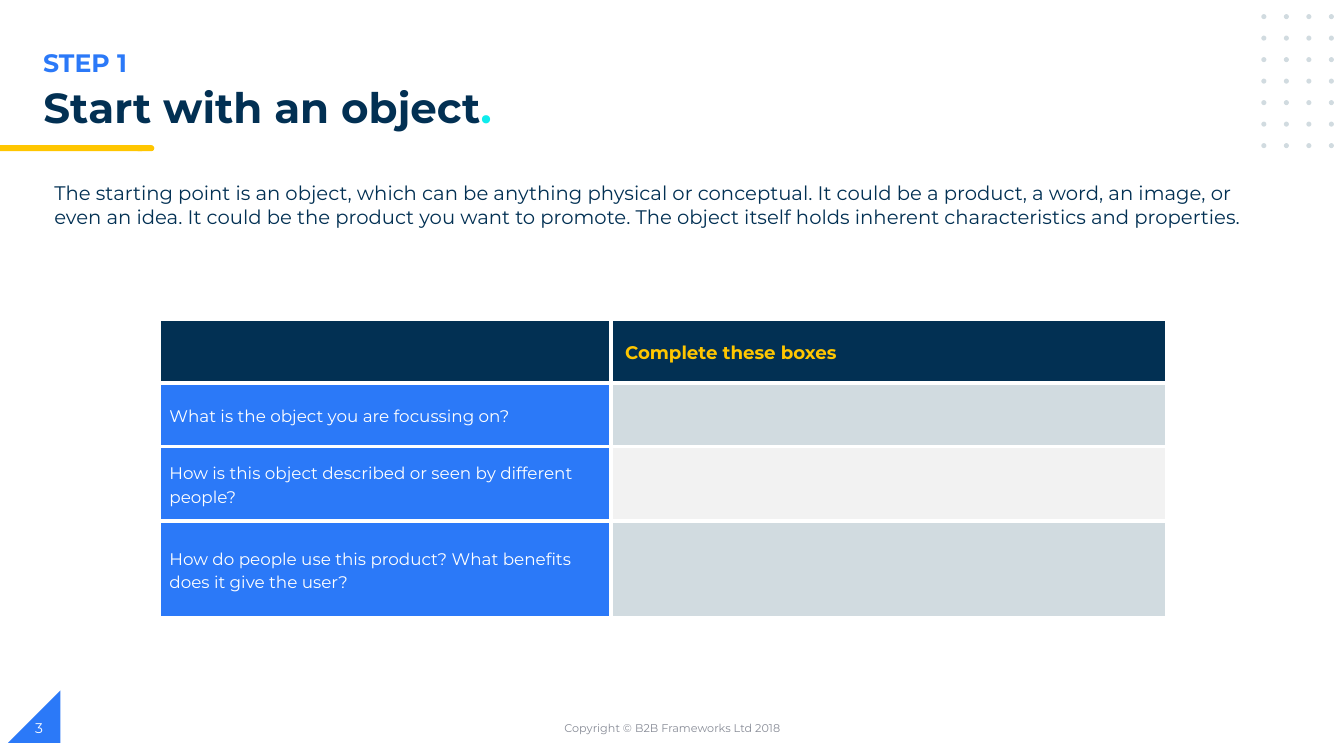
from itertools import product

from lxml.etree import SubElement as SubElem
from pptx import Presentation
from pptx.dml.color import RGBColor
from pptx.enum.shapes import MSO_SHAPE as SHAPE
from pptx.enum.text import MSO_ANCHOR as ANCHOR, MSO_AUTO_SIZE as FIT, PP_ALIGN as ALIGN
from pptx.oxml.ns import qn
from pptx.util import Inches, Pt

NAVY = RGBColor(0x02, 0x30, 0x53)
BLUE = RGBColor(0x2B, 0x79, 0xF8)
GOLD = RGBColor(0xFF, 0xC6, 0x00)
CYAN = RGBColor(0x0E, 0xEC, 0xEC)
MIST = RGBColor(0xD1, 0xDB, 0xE0)
PALE = RGBColor(0xF2, 0xF2, 0xF2)
GRAY = RGBColor(0x88, 0x8C, 0x97)
WHITE = RGBColor(0xFF, 0xFF, 0xFF)


class Deck:
    def __init__(self, font):
        self.font = font
        self.prs = Presentation()
        self.prs.slide_width, self.prs.slide_height = Inches(13.33), Inches(7.5)
        self.slide = self.prs.slides.add_slide(self.prs.slide_layouts[5])

    def style(self, run, size, color, bold=False):
        font = run.font
        font.name, font.size, font.bold = self.font, Pt(size), bold
        font.color.rgb = color

    def shape(self, kind, x, y, w, h, color):
        shape = self.slide.shapes.add_shape(kind, Inches(x), Inches(y), Inches(w), Inches(h))
        shape.shadow.inherit = False
        shape.fill.solid()
        shape.fill.fore_color.rgb = color
        shape.line.fill.background()
        return shape

    def text(self, text, x, y, w, h, size, color, bold=False,
             align=ALIGN.LEFT, anchor=ANCHOR.TOP):
        box = self.slide.shapes.add_textbox(Inches(x), Inches(y), Inches(w), Inches(h))
        frame = box.text_frame
        frame.word_wrap = True
        frame.vertical_anchor = anchor
        frame.text = text
        para = frame.paragraphs[0]
        para.alignment = align
        self.style(para.runs[0], size, color, bold)

    def title(self, text, mark, x, y, w, h):
        """Fill the title placeholder and close it with a coloured mark."""
        title = self.slide.shapes.title
        title.left, title.top = Inches(x), Inches(y)
        title.width, title.height = Inches(w), Inches(h)
        frame = title.text_frame
        frame.text = text
        frame.auto_size = FIT.NONE
        frame.vertical_anchor = ANCHOR.TOP
        para = frame.paragraphs[0]
        para.alignment, para.line_spacing = ALIGN.LEFT, 0.9
        para.add_run().text = mark
        for run, color in zip(para.runs, (NAVY, CYAN)):
            self.style(run, 30, color, True)

    def cell(self, cell, text, fill, size, color, bold, inset):
        props = cell._tc.get_or_add_tcPr()
        for side in "LRTB":
            line = SubElem(props, qn(f"a:ln{side}"), w=str(Pt(3)))
            paint = SubElem(line, qn("a:solidFill"))
            SubElem(paint, qn("a:srgbClr"), val=str(WHITE))
        cell.fill.solid()
        cell.fill.fore_color.rgb = fill
        cell.vertical_anchor = ANCHOR.MIDDLE
        cell.margin_left, cell.margin_right = Inches(inset), Inches(0.1)
        cell.margin_top = cell.margin_bottom = 0
        if text:
            cell.text = text
            para = cell.text_frame.paragraphs[0]
            para.line_spacing = 1.15
            self.style(para.runs[0], size, color, bold)

    def table(self, rows, x, y, widths, heights):
        """Draw rows of (left text, right text, left fill, right fill), the first as header."""
        frame = self.slide.shapes.add_table(
            len(rows), len(widths), Inches(x), Inches(y),
            Inches(sum(widths)), Inches(sum(heights)))
        table = frame.table
        for col, width in zip(table.columns, widths):
            col.width = Inches(width)
        for row, height in zip(table.rows, heights):
            row.height = Inches(height)
        for i, (left, right, *fills) in enumerate(rows):
            look = (12, WHITE, False, 0.1) if i else (13, GOLD, True, 0.14)
            for j, (text, fill) in enumerate(zip((left, right), fills)):
                self.cell(table.cell(i, j), text, fill, *look)


def main():
    deck = Deck("Montserrat")
    corner = deck.shape(SHAPE.RIGHT_TRIANGLE, 0.08, 6.85, 0.52, 0.52, BLUE)
    corner.rotation = 270
    deck.shape(SHAPE.FLOWCHART_TERMINATOR, 1.34, 1.44, 0.19, 0.06, GOLD)
    deck.shape(SHAPE.RECTANGLE, 0, 1.44, 1.41, 0.06, GOLD)
    for row, col in product(range(7), range(4)):
        deck.shape(SHAPE.OVAL, 12.51 + col * 0.67 / 3, 0.14 + row * 1.28 / 6,
                   0.05, 0.05, MIST)

    deck.text("STEP 1", 0.33, 0.42, 6.69, 0.4, 18, BLUE, True)
    deck.title("Start with an object", ".", 0.33, 0.82, 8.06, 0.4)
    deck.text("The starting point is an object, which can be anything physical or "
              "conceptual. It could be a product, a word, an image, or even an idea. "
              "It could be the product you want to promote. The object itself holds "
              "inherent characteristics and properties.",
              0.44, 1.75, 12, 0.57, 14, NAVY)

    deck.table([
        ("", "Complete these boxes", NAVY, NAVY),
        ("What is the object you are focussing on?", "", BLUE, MIST),
        ("How is this object described or seen by different people?", "", BLUE, PALE),
        ("How do people use this product? What benefits does it give the user?",
         "", BLUE, MIST),
    ], 1.58, 3.17, (4.48, 5.51), (0.63, 0.63, 0.74, 0.96))

    deck.text("Copyright © B2B Frameworks Ltd 2018", 4.42, 7.02, 4.5, 0.4, 8, GRAY,
              align=ALIGN.CENTER, anchor=ANCHOR.MIDDLE)
    deck.text("3", 0.25, 7.02, 3, 0.4, 10, WHITE, anchor=ANCHOR.MIDDLE)
    deck.prs.save("out.pptx")


if __name__ == "__main__":
    main()
